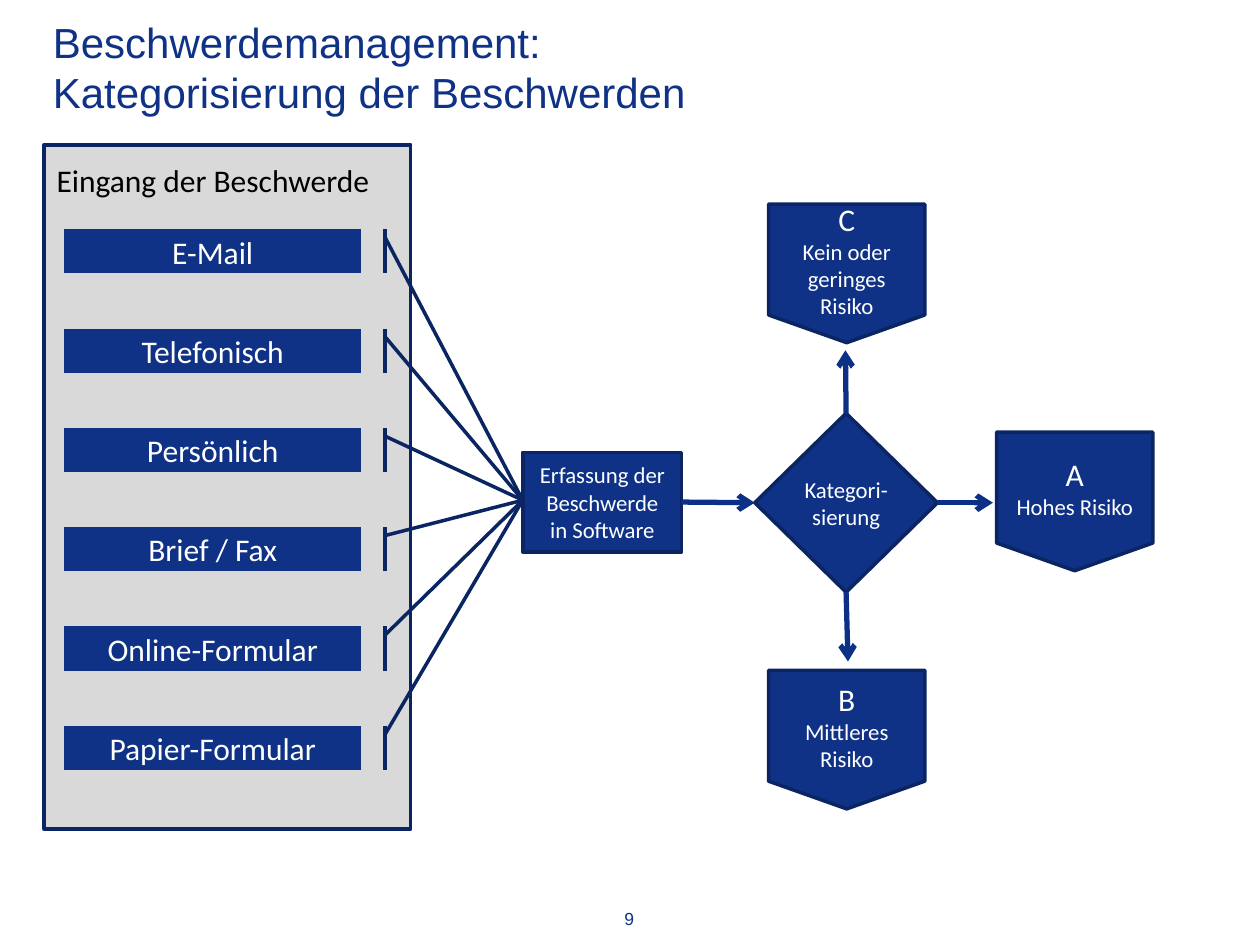
"""Build the slide on sorting complaints by risk."""
from lxml import etree
from pptx import Presentation
from pptx.dml.color import RGBColor
from pptx.enum import shapes, text
from pptx.oxml import ns
from pptx.util import Inches, Pt

BLUE, EDGE, ARROW, GREY = "0F3286", "0B2563", "0C3086", "D9D9D9"
WHITE, BLACK = "FFFFFF", "000000"
KIND = shapes.MSO_SHAPE
MID = text.PP_ALIGN.CENTER
LEFT = text.PP_ALIGN.LEFT

TITLE = ["Beschwerdemanagement:", "Kategorisierung der Beschwerden"]
HEAD = "Eingang der Beschwerde"
INPUTS = ["E-Mail", "Telefonisch", "Persönlich", "Brief / Fax",
          "Online-Formular", "Papier-Formular"]
STEP = "Erfassung der Beschwerde in Software"
SORT = "Kategori-sierung"
RISKS = [
    ("C", "Kein oder geringes Risiko", 6.1, 1.62),
    ("B", "Mittleres Risiko", 6.1, 5.32),
    ("A", "Hohes Risiko", 7.91, 3.43),
]
ENDS = [(3, 7.88, 3.99), (0, 6.71, 2.78), (2, 6.73, 5.25)]

PANEL = (0.35, 1.15, 2.91, 5.43)
STEP_BOX = (4.15, 3.59, 1.26, 0.79)
SORT_BOX = (5.99, 3.28, 1.45, 1.42)
BAR_X, BAR_Y, BAR_W, BAR_H, PITCH = 0.51, 1.82, 2.36, 0.35, 0.788
GOAL_X, GOAL_Y = 4.15, 3.97


def rgb(code):
    """Turn a hex string into a colour."""
    return RGBColor.from_string(code)


def write(frame, lines, sizes, color, align=MID, font="Calibri"):
    """Put one paragraph per line into a text frame."""
    frame.word_wrap = True
    frame.text = "\n".join(lines)
    for para, size in zip(frame.paragraphs, sizes):
        para.alignment = align
        for run in para.runs:
            run.font.name = font
            run.font.size = Pt(size)
            run.font.color.rgb = rgb(color)


def label(slide, box, lines, size, color, align, font, pad=True):
    """Add a text box."""
    frame = slide.shapes.add_textbox(*map(Inches, box)).text_frame
    write(frame, lines, [size] * len(lines), color, align, font)
    if not pad:
        frame.margin_left = frame.margin_right = 0
        frame.margin_top = frame.margin_bottom = 0


def block(slide, kind, box, lines=(), sizes=(), fill=BLUE):
    """Add a filled shape with centred text."""
    shape = slide.shapes.add_shape(kind, *map(Inches, box))
    shape.shadow.inherit = False
    shape.fill.solid()
    shape.fill.fore_color.rgb = rgb(fill)
    shape.line.color.rgb = rgb(EDGE)
    shape.line.width = Pt(2)
    if lines:
        write(shape.text_frame, lines, sizes, WHITE)
        shape.text_frame.vertical_anchor = text.MSO_ANCHOR.MIDDLE
    return shape


def arrow(slide, start, site, x, y):
    """Add an arrow from a side of a shape to a point."""
    line = slide.shapes.add_connector(
        shapes.MSO_CONNECTOR.STRAIGHT, 0, 0, Inches(x), Inches(y))
    line.begin_connect(start, site)
    line.line.color.rgb = rgb(ARROW)
    line.line.width = Pt(3)
    tip = etree.SubElement(line.line._get_or_add_ln(), ns.qn("a:tailEnd"))
    tip.set("type", "arrow")
    etree.SubElement(line.element.spPr, ns.qn("a:effectLst"))
    return line


def main():
    """Draw the slide and save it."""
    deck = Presentation()
    deck.slide_width, deck.slide_height = Inches(10), Inches(7.5)
    slide = deck.slides.add_slide(deck.slide_layouts[6])

    label(slide, (4.76, 7.21, 0.47, 0.17), ["9"], 10, BLUE, MID, "Arial", False)
    block(slide, KIND.RECTANGLE, PANEL, fill=GREY)
    step = block(slide, KIND.FLOWCHART_PROCESS, STEP_BOX, [STEP], [13])
    sort = block(slide, KIND.FLOWCHART_DECISION, SORT_BOX, [SORT], [13])
    sort.text_frame.margin_left = sort.text_frame.margin_right = 0
    for name, note, x, y in RISKS:
        block(slide, KIND.FLOWCHART_OFFPAGE_CONNECTOR, (x, y, 1.24, 1.1),
              [name, note], [18, 13])

    for i, name in enumerate(INPUTS):
        top = BAR_Y + i * PITCH
        bar = block(slide, KIND.LINE_CALLOUT_1_ACCENT_BAR,
                    (BAR_X, top, BAR_W, BAR_H), [name], [18])
        bar.element.spPr.xfrm.set("flipH", "1")
        reach = (BAR_X + BAR_W - GOAL_X) / BAR_W
        for k, value in enumerate((0.19, -0.08, (GOAL_Y - top) / BAR_H, reach)):
            bar.adjustments[k] = value

    label(slide, (0.35, 1.23, 2.91, 0.4), [HEAD], 18, BLACK, LEFT, "Calibri")
    link = arrow(slide, step, 3, 5.99, 3.99)
    link.end_connect(sort, 1)
    for site, x, y in ENDS:
        arrow(slide, sort, site, x, y)
    label(slide, (0.42, 0.13, 9.17, 0.93), TITLE, 24, BLUE, LEFT, "Arial", False)
    deck.save("out.pptx")


if __name__ == "__main__":
    main()
